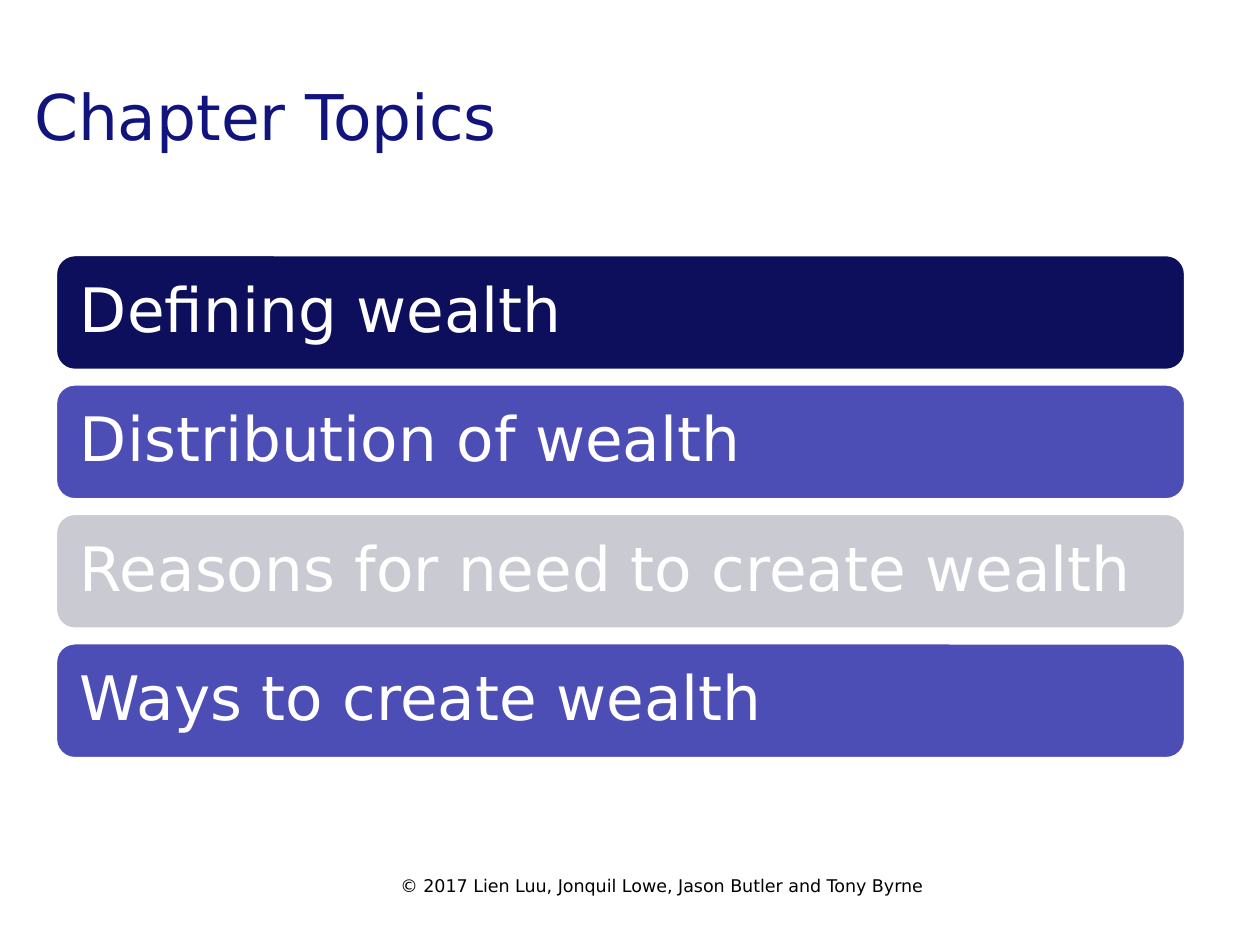
import dataclasses

import pptx
import pptx.dml.color
import pptx.enum.shapes
import pptx.enum.text
import pptx.util
from pptx.util import Inches

FONT = "DejaVu Sans"
BAR_LEFT, BAR_TOP, BAR_WIDTH, BAR_HEIGHT = 0.44, 2.02, 8.97, 0.92
BAR_PITCH = 1.027


@dataclasses.dataclass(frozen=True)
class Topic:
    text: str
    fill: str


TOPICS = [
    Topic("Defining wealth", "0D0F5C"),
    Topic("Distribution of wealth", "4C4EB6"),
    Topic("Reasons for need to create wealth", "CACAD2"),
    Topic("Ways to create wealth", "4C4EB6"),
]


def color(value: str) -> pptx.dml.color.RGBColor:
    return pptx.dml.color.RGBColor.from_string(value)


def write(shape, text: str, size: float, text_color: str):
    frame = shape.text_frame
    frame.word_wrap = True
    frame.auto_size = pptx.enum.text.MSO_AUTO_SIZE.NONE
    frame.vertical_anchor = pptx.enum.text.MSO_ANCHOR.MIDDLE
    paragraph = frame.paragraphs[0]
    paragraph.alignment = pptx.enum.text.PP_ALIGN.LEFT
    run = paragraph.add_run()
    run.text = text
    run.font.name = FONT
    run.font.size = pptx.util.Pt(size)
    run.font.color.rgb = color(text_color)
    return paragraph


def add_title(slide, text: str) -> None:
    title = slide.shapes.title
    title.left, title.top = Inches(0.17), Inches(0.33)
    title.width, title.height = Inches(9.42), Inches(1.17)
    write(title, text, 36, "11147D")


def add_topic_bar(shapes, topic: Topic, top: float) -> None:
    bar = shapes.add_shape(
        pptx.enum.shapes.MSO_SHAPE.ROUNDED_RECTANGLE,
        Inches(BAR_LEFT), Inches(top), Inches(BAR_WIDTH), Inches(BAR_HEIGHT),
    )
    bar.shadow.inherit = False
    bar.fill.solid()
    bar.fill.fore_color.rgb = color(topic.fill)
    bar.line.color.rgb = color("FFFFFF")
    bar.line.width = pptx.util.Pt(2)
    frame = bar.text_frame
    frame.margin_left = frame.margin_right = Inches(0.15)
    frame.margin_top = frame.margin_bottom = Inches(0.15)
    paragraph = write(bar, topic.text, 35, "FFFFFF")
    paragraph.line_spacing = 0.9


def add_copyright(slide, text: str) -> None:
    box = slide.shapes.add_textbox(
        Inches(3.08), Inches(6.83), Inches(5.96), Inches(0.4)
    )
    write(box, text, 10, "000000")


def main() -> None:
    presentation = pptx.Presentation()
    presentation.slide_width = Inches(10)
    presentation.slide_height = Inches(7.5)
    slide = presentation.slides.add_slide(presentation.slide_layouts[5])
    add_title(slide, "Chapter Topics")
    group = slide.shapes.add_group_shape()
    for index, topic in enumerate(TOPICS):
        add_topic_bar(group.shapes, topic, BAR_TOP + index * BAR_PITCH)
    add_copyright(slide, "© 2017 Lien Luu, Jonquil Lowe, Jason Butler and Tony Byrne")
    presentation.save("out.pptx")


if __name__ == "__main__":
    main()
